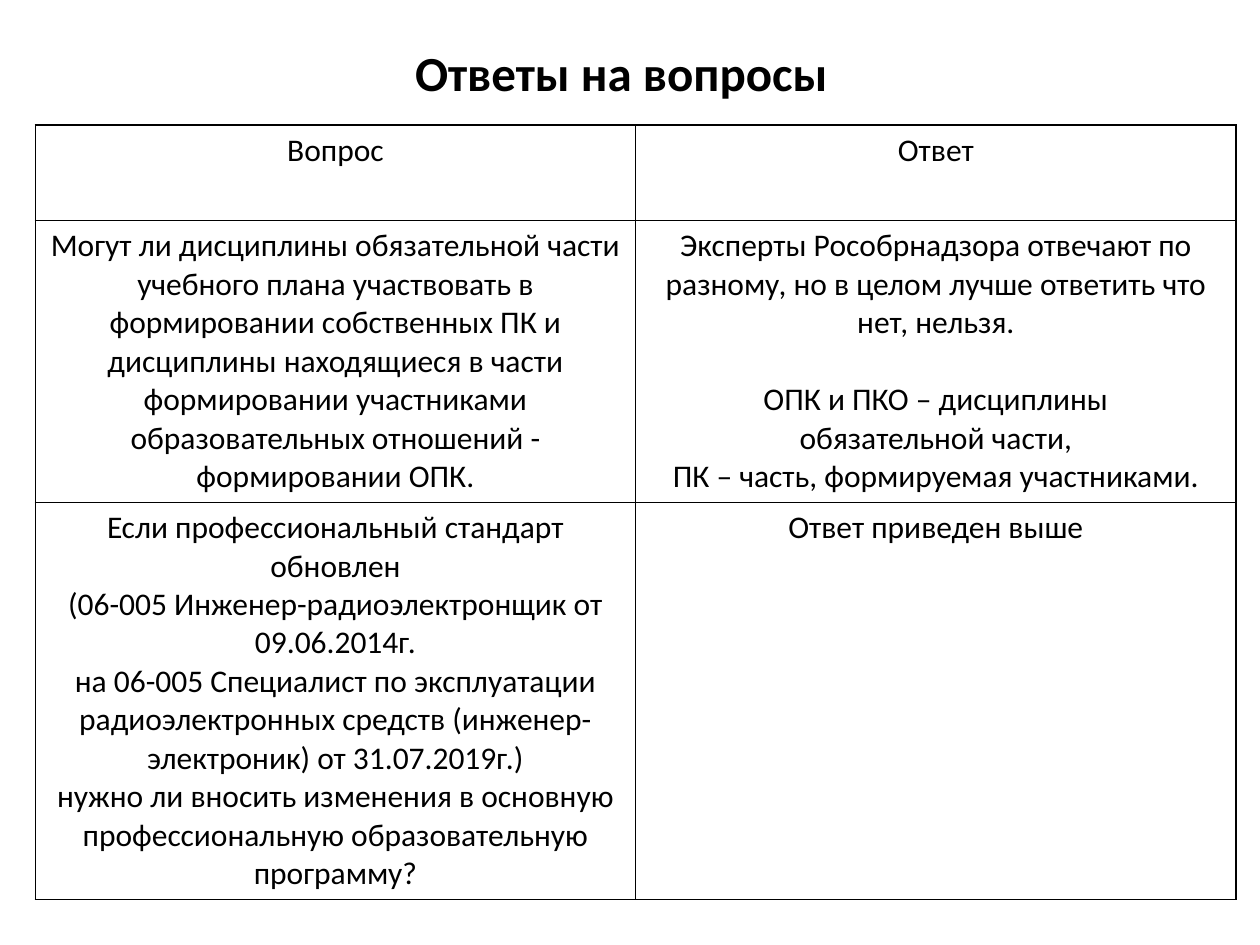
from lxml import etree
from pptx import Presentation
from pptx.dml.color import RGBColor
from pptx.enum import text
from pptx.oxml import ns
from pptx.util import Inches, Pt

FONT = "Calibri"
BLACK, WHITE = "000000", "FFFFFF"
ROWS = [
    (["Вопрос"], ["Ответ"]),
    (
        ["Могут ли дисциплины обязательной части учебного плана участвовать в "
         "формировании собственных ПК и дисциплины находящиеся в части формировании "
         "участниками образовательных отношений - формировании ОПК."],
        ["Эксперты Рособрнадзора отвечают по разному, но в целом лучше ответить что "
         "нет, нельзя.",
         "ОПК и ПКО – дисциплины\nобязательной части,\nПК – часть, формируемая участниками."],
    ),
    (
        ["Если профессиональный стандарт обновлен\n"
         "(06-005 Инженер-радиоэлектронщик от 09.06.2014г.\n"
         "на 06-005 Специалист по эксплуатации радиоэлектронных средств "
         "(инженер-электроник) от 31.07.2019г.)\n"
         "нужно ли вносить изменения в основную профессиональную образовательную программу?"],
        ["Ответ приведен выше"],
    ),
]


def color(value):
    """Turn a hex string into a colour."""
    return RGBColor.from_string(value)


def format_paragraph(p, size, bold=False):
    """Centre a paragraph and set the font of its runs."""
    p.alignment = text.PP_ALIGN.CENTER
    for r in p.runs:
        r.font.name, r.font.size, r.font.bold = FONT, Pt(size), bold
        r.font.color.rgb = color(BLACK)


def add_borders(cell, value, width):
    """Draw a solid line on all four sides of a cell."""
    tcPr = cell._tc.get_or_add_tcPr()
    for i, side in enumerate(("lnL", "lnR", "lnT", "lnB")):
        ln = etree.Element(ns.qn(f"a:{side}"), w=str(Pt(width)))
        fill = etree.SubElement(ln, ns.qn("a:solidFill"))
        etree.SubElement(fill, ns.qn("a:srgbClr"), val=value)
        tcPr.insert(i, ln)


def fill_cell(cell, paragraphs):
    """Write the paragraphs of a cell, set one line apart, and style it."""
    tf = cell.text_frame
    for i, content in enumerate(paragraphs):
        p = tf.add_paragraph() if i else tf.paragraphs[0]
        p.text = content
        format_paragraph(p, 18)
        if i:
            p.space_before = Pt(22)
    cell.fill.solid()
    cell.fill.fore_color.rgb = color(WHITE)
    add_borders(cell, BLACK, 1)


def add_title(s, left, top, width, height):
    """Place and format the slide title."""
    sp = s.shapes.title
    sp.left, sp.top, sp.width, sp.height = left, top, width, height
    tf = sp.text_frame
    tf.text = "Ответы на вопросы"
    tf.vertical_anchor = text.MSO_ANCHOR.TOP
    p = tf.paragraphs[0]
    p.space_before = Pt(5.6)
    format_paragraph(p, 28, bold=True)


def add_answers(s, left, top, width, height):
    """Add the table of questions and answers."""
    table = s.shapes.add_table(len(ROWS), 2, left, top, width, height).table
    for row, contents in zip(table.rows, ROWS):
        for cell, paragraphs in zip(row.cells, contents):
            fill_cell(cell, paragraphs)


def main():
    """Build the slide and save it."""
    prs = Presentation()
    prs.slide_width, prs.slide_height = Inches(10), Inches(7.5)
    s = prs.slides.add_slide(prs.slide_layouts[5])
    add_title(s, Inches(0.43), Inches(0.29), Inches(9), Inches(0.71))
    add_answers(s, Inches(0.28), Inches(0.99), Inches(9.53), Inches(2.28))
    prs.save("out.pptx")


if __name__ == "__main__":
    main()
